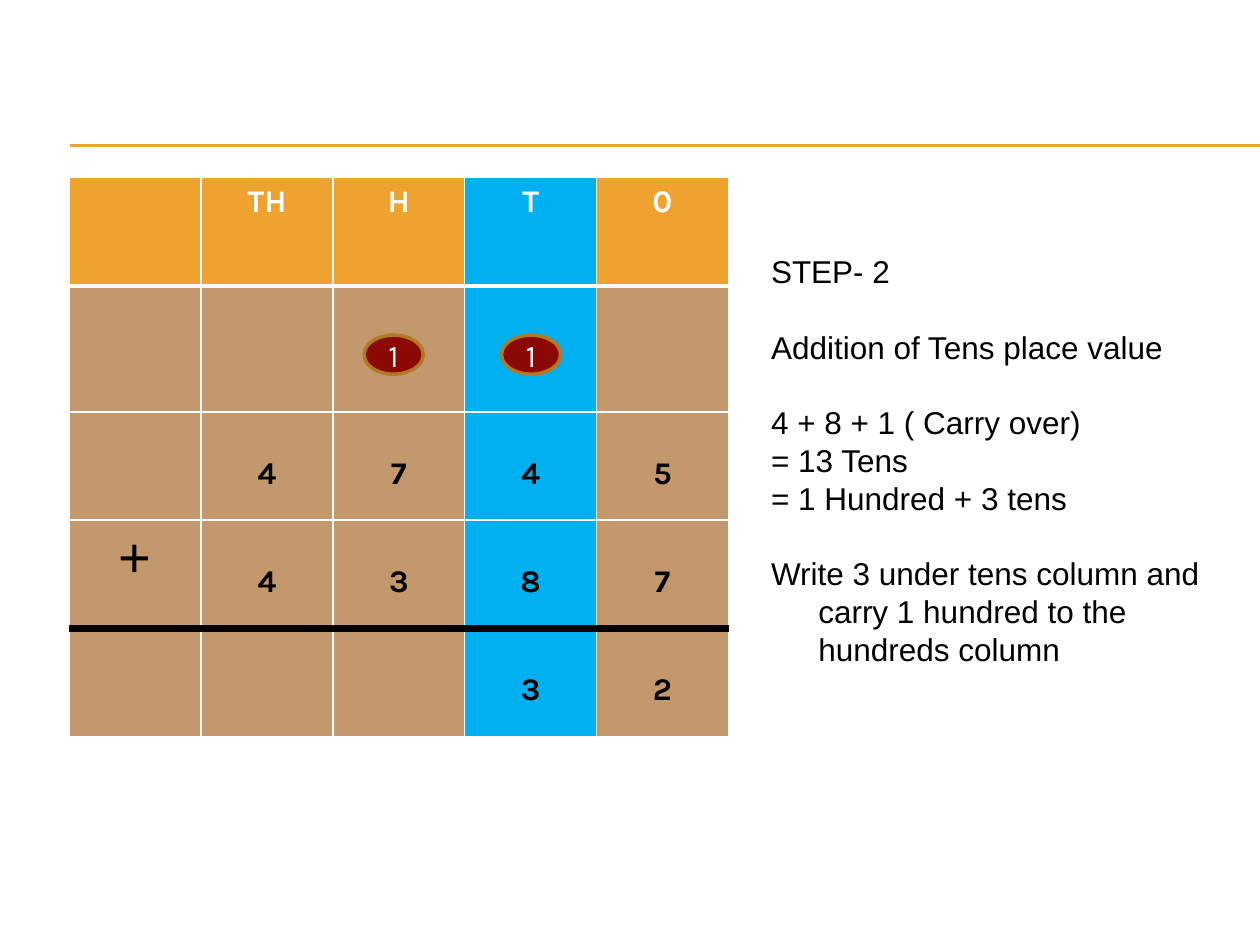
from lxml.etree import SubElement
from pptx import Presentation
from pptx.dml.color import RGBColor
from pptx.enum.shapes import MSO_CONNECTOR, MSO_SHAPE
from pptx.enum.text import MSO_ANCHOR, MSO_AUTO_SIZE, PP_ALIGN
from pptx.oxml.ns import qn
from pptx.util import Pt

ORANGE = RGBColor(0xF0, 0xA2, 0x2E)
BLUE = RGBColor(0x00, 0xB0, 0xF0)
TAN = RGBColor(0xC3, 0x98, 0x6D)
DARK_RED = RGBColor(0x8B, 0x08, 0x05)
BRONZE = RGBColor(0xB2, 0x78, 0x22)
WHITE = RGBColor(0xFF, 0xFF, 0xFF)
BLACK = RGBColor(0x00, 0x00, 0x00)

LINE_HEIGHT = 21.6
TENS_COLUMN = 3
SUM_ROWS = [
    ["", "TH", "H", "T", "0"],
    ["", "", "", "", ""],
    ["", "4", "7", "4", "5"],
    ["+", "4", "3", "8", "7"],
    ["", "", "", "3", "2"],
]
ROW_HEIGHTS = [61.9, 72, 61.9, 61.9, 61.9]
# Line above each row, then the line below the last one
ROW_BORDERS = [(WHITE, 1), (WHITE, 3), (WHITE, 1), (WHITE, 1), (BLACK, 4.5), (WHITE, 1)]
# Text and whether a blank line's height stands above it
STEPS = [
    ("STEP- 2", False),
    ("Addition of Tens place value", True),
    ("4 + 8 + 1 ( Carry over)", True),
    ("= 13 Tens", False),
    ("= 1 Hundred + 3 tens", False),
    ("Write 3 under tens column and carry 1 hundred to the hundreds column", True),
]


def add_run(paragraph, text, color, font="Karla", size=18, bold=False):
    run = paragraph.add_run()
    run.text = text
    run.font.name = font
    run.font.size = Pt(size)
    run.font.bold = bold
    run.font.color.rgb = color


def add_rule(slide, left, top, width):
    rule = slide.shapes.add_connector(
        MSO_CONNECTOR.STRAIGHT, Pt(left), Pt(top), Pt(left + width), Pt(top))
    rule.line.color.rgb = ORANGE
    rule.line.width = Pt(0.75)
    SubElement(rule._element.spPr, qn("a:effectLst"))


def add_steps(slide, left, top, width, height):
    body = slide.placeholders[1]
    body.left, body.top, body.width, body.height = Pt(left), Pt(top), Pt(width), Pt(height)
    frame = body.text_frame
    frame.word_wrap = True
    frame.auto_size = MSO_AUTO_SIZE.NONE
    frame.vertical_anchor = MSO_ANCHOR.TOP
    for index, (text, gap) in enumerate(STEPS):
        paragraph = frame.add_paragraph() if index else frame.paragraphs[0]
        properties = paragraph._p.get_or_add_pPr()
        properties.set("marL", str(Pt(27)))
        properties.set("indent", str(-Pt(27)))
        SubElement(properties, qn("a:buNone"))
        paragraph.line_spacing = Pt(LINE_HEIGHT)
        paragraph.space_before = Pt(LINE_HEIGHT if gap else 0)
        add_run(paragraph, text, BLACK, font="Arial")


def set_border(cell, side, color, width):
    line = SubElement(cell._tc.get_or_add_tcPr(), qn(f"a:ln{side}"), w=str(Pt(width)))
    fill = SubElement(line, qn("a:solidFill"))
    SubElement(fill, qn("a:srgbClr"), val=str(color))


def format_cell(cell, text, row, column):
    # Borders come before the fill
    set_border(cell, "L", WHITE, 1)
    set_border(cell, "R", WHITE, 1)
    set_border(cell, "T", *ROW_BORDERS[row])
    set_border(cell, "B", *ROW_BORDERS[row + 1])
    cell.fill.solid()
    base_color = ORANGE if row == 0 else TAN
    cell.fill.fore_color.rgb = BLUE if column == TENS_COLUMN else base_color
    if not text:
        return
    paragraph = cell.text_frame.paragraphs[0]
    paragraph.alignment = PP_ALIGN.CENTER
    if text == "+":
        add_run(paragraph, text, BLACK, font="Arial", size=32)
    else:
        if row > 0:
            cell.margin_top = Pt(24.7)
        add_run(paragraph, text, BLACK if row else WHITE, bold=True)


def add_sum_table(slide, left, top, width, height):
    row_count, column_count = len(SUM_ROWS), len(SUM_ROWS[0])
    table = slide.shapes.add_table(
        row_count, column_count, Pt(left), Pt(top), Pt(width), Pt(height)).table
    table.horz_banding = False
    for column in table.columns:
        column.width = Pt(width / column_count)
    for row, row_height in zip(table.rows, ROW_HEIGHTS):
        row.height = Pt(row_height)
    for row, texts in enumerate(SUM_ROWS):
        for column, text in enumerate(texts):
            format_cell(table.cell(row, column), text, row, column)


def add_carry(slide, left, top, width, height):
    carry = slide.shapes.add_shape(MSO_SHAPE.OVAL, Pt(left), Pt(top), Pt(width), Pt(height))
    carry.shadow.inherit = False
    carry.fill.solid()
    carry.fill.fore_color.rgb = DARK_RED
    carry.line.color.rgb = BRONZE
    carry.line.width = Pt(2)
    carry.text_frame.vertical_anchor = MSO_ANCHOR.MIDDLE
    paragraph = carry.text_frame.paragraphs[0]
    paragraph.alignment = PP_ALIGN.CENTER
    add_run(paragraph, "1", WHITE)


def main():
    presentation = Presentation()
    presentation.slide_width, presentation.slide_height = Pt(720), Pt(540)
    slide = presentation.slides.add_slide(presentation.slide_layouts[1])
    title = slide.shapes.title._element
    title.getparent().remove(title)

    # Double rule across the top
    for top in (82.8, 83.5):
        add_rule(slide, 40.3, top, 679.7)
    # Explanation on the right
    add_steps(slide, 433.4, 140.4, 270, 247)
    # Column addition with its carried digits
    add_sum_table(slide, 39.6, 101.5, 376.6, sum(ROW_HEIGHTS))
    for left in (286.6, 208.1):
        add_carry(slide, left, 191.5, 33.8, 22.3)

    presentation.save("out.pptx")


if __name__ == "__main__":
    main()
